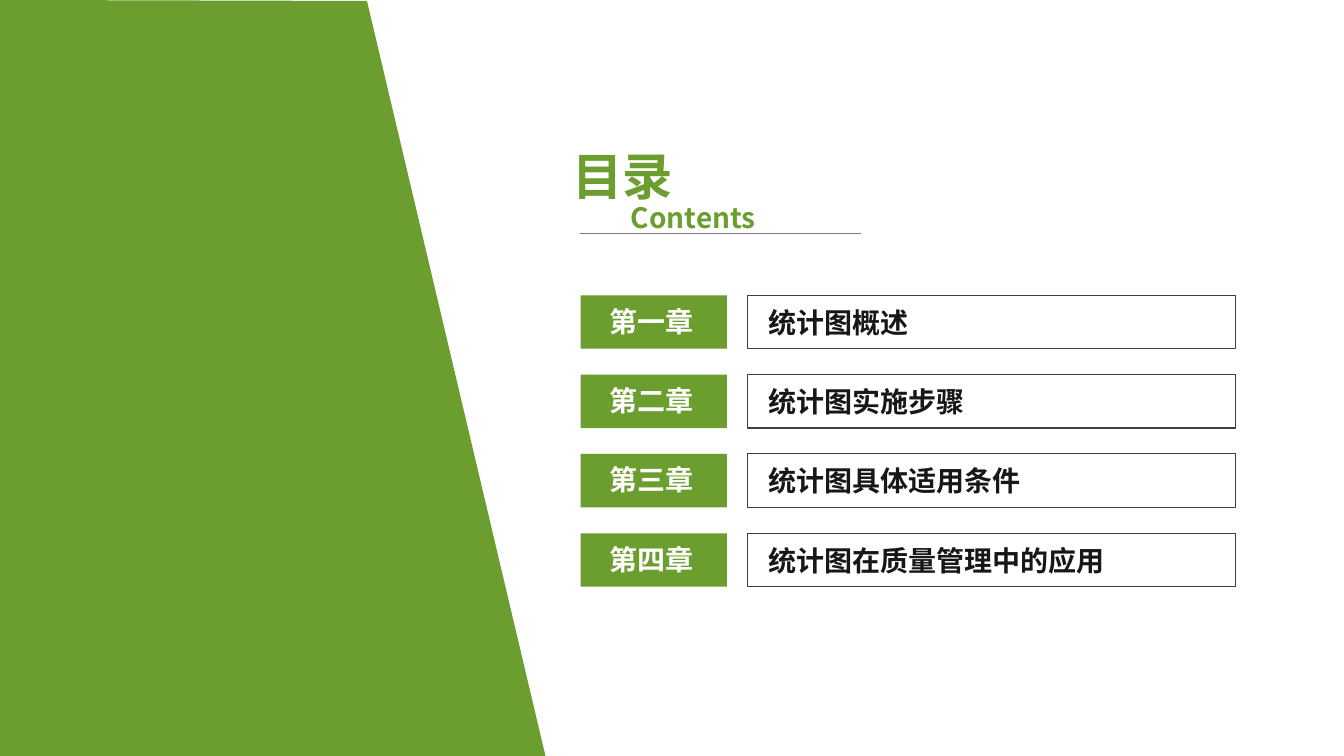
from lxml import etree
from pptx import Presentation
from pptx.dml.color import RGBColor
from pptx.enum.shapes import MSO_CONNECTOR, MSO_SHAPE
from pptx.enum.text import MSO_AUTO_SIZE
from pptx.oxml.ns import qn
from pptx.util import Inches, Pt

RECTANGLE = MSO_SHAPE.RECTANGLE
STRAIGHT = MSO_CONNECTOR.STRAIGHT
GROW = MSO_AUTO_SIZE.SHAPE_TO_FIT_TEXT

TITLE, SUBTITLE = "目录", "Contents"
CHAPTERS = [
    ("第一章", "统计图概述"),
    ("第二章", "统计图实施步骤"),
    ("第三章", "统计图具体适用条件"),
    ("第四章", "统计图在质量管理中的应用"),
]

FONT = "Noto Sans CJK SC"
GREEN, WHITE, INK, FRAME, RULE = "6C9D2F", "FFFFFF", "181717", "404040", "7F7F7F"

SLIDE_W, SLIDE_H = 13.33, 7.5
PANEL = [(3.64, 0.01), (0, 0), (0, SLIDE_H), (5.41, SLIDE_H)]
LABEL_X, LABEL_W = 5.76, 1.45
TOPIC_X, TOPIC_W = 7.41, 4.84
FIRST_ROW, ROW_PITCH, ROW_H = 2.93, 0.787, 0.53
LINE_H = 0.44


def rgb(color):
    return RGBColor.from_string(color)


def paint(shape, fill=None, line=None):
    shape.shadow.inherit = False
    if fill:
        shape.fill.solid()
        shape.fill.fore_color.rgb = rgb(fill)
    else:
        shape.fill.background()
    if line:
        shape.line.color.rgb = rgb(line)
        shape.line.width = Pt(0.75)
    else:
        shape.line.fill.background()


def add_text(slide, text, left, top, width, height=LINE_H, size=20, color=GREEN):
    frame = slide.shapes.add_textbox(*map(Inches, (left, top, width, height))).text_frame
    frame.word_wrap = True
    frame.auto_size = GROW
    run = frame.paragraphs[0].add_run()
    run.text = text
    run.font.size = Pt(size)
    run.font.bold = True
    run.font.color.rgb = rgb(color)
    run.font.name = FONT
    etree.SubElement(run.font._element, qn("a:ea"), typeface=FONT)


def add_box(slide, left, top, width, **colors):
    box = slide.shapes.add_shape(RECTANGLE, *map(Inches, (left, top, width, ROW_H)))
    paint(box, **colors)


def add_panel(slide):
    start, *corners = [(Inches(x), Inches(y)) for x, y in PANEL]
    outline = slide.shapes.build_freeform(*start)
    outline.add_line_segments(corners, close=True)
    paint(outline.convert_to_shape(), fill=GREEN)


def add_heading(slide):
    add_text(slide, TITLE, 5.58, 1.39, 1.57, 0.71, size=36)
    rule = slide.shapes.add_connector(STRAIGHT, *map(Inches, (5.75, 2.32, 8.54, 2.32)))
    rule.line.color.rgb = rgb(RULE)
    rule.line.width = Pt(0.5)
    etree.SubElement(rule._element.spPr, qn("a:effectLst"))
    add_text(slide, SUBTITLE, 6.16, 1.94, 1.57)


def add_chapters(slide):
    for row, (label, topic) in enumerate(CHAPTERS):
        top = FIRST_ROW + row * ROW_PITCH
        add_box(slide, TOPIC_X, top, TOPIC_W, line=FRAME)
        add_text(slide, topic, TOPIC_X + 0.11, top + 0.05, 4.67, color=INK)
        add_box(slide, LABEL_X, top, LABEL_W, fill=GREEN)
        add_text(slide, label, LABEL_X + 0.19, top + 0.04, 1.05, color=WHITE)


def main():
    deck = Presentation()
    deck.slide_width, deck.slide_height = Inches(SLIDE_W), Inches(SLIDE_H)
    slide = deck.slides.add_slide(deck.slide_layouts[6])
    add_panel(slide)
    add_chapters(slide)
    add_heading(slide)
    deck.save("out.pptx")


if __name__ == "__main__":
    main()
